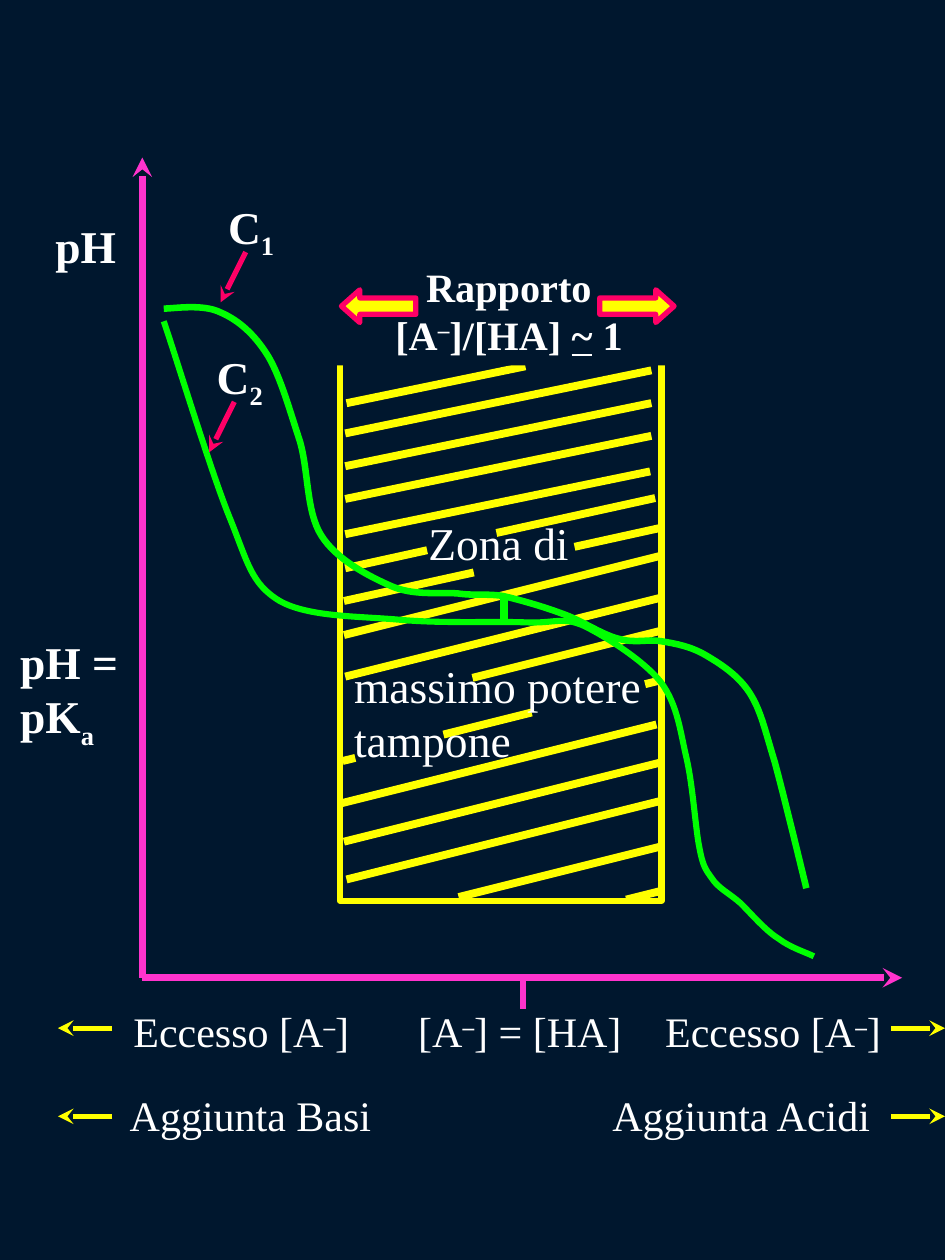
from lxml import etree
from pptx import Presentation
from pptx.dml.color import RGBColor
from pptx.enum.shapes import MSO_CONNECTOR, MSO_SHAPE
from pptx.enum.text import MSO_AUTO_SIZE, PP_ALIGN
from pptx.oxml.ns import qn
from pptx.util import Inches, Pt

STRAIGHT = MSO_CONNECTOR.STRAIGHT
RECTANGLE, RIGHT_ARROW = MSO_SHAPE.RECTANGLE, MSO_SHAPE.RIGHT_ARROW
LEFT, CENTER = PP_ALIGN.LEFT, PP_ALIGN.CENTER

NAVY = RGBColor(0x00, 0x17, 0x2E)
WHITE = RGBColor(0xFF, 0xFF, 0xFF)
YELLOW = RGBColor(0xFF, 0xFF, 0x00)
GREEN = RGBColor(0x00, 0xFF, 0x00)
MAGENTA = RGBColor(0xFF, 0x33, 0xCC)
CRIMSON = RGBColor(0xFF, 0x00, 0x66)
FONT = "Times New Roman"

SUPERSCRIPT = {"baseline": 30}
SUBSCRIPT = {"baseline": -25}
MINUS = ("–", {"baseline": 30, "size": 23, "bold": True})

# Stripes by slope: start x, start y, end x, from the corner of the buffer zone
STRIPES = {
    0.206: [(0.05, 0.35, 1.47), (0.04, 0.59, 2.47), (0.04, 0.85, 2.47),
            (0.04, 1.11, 2.47), (0.04, 1.39, 2.46)],
    0.22: [(0.04, 1.66, 0.69), (1.24, 1.38, 2.5), (1.86, 1.49, 2.54),
           (0.03, 1.92, 1.06)],
    0.25: [(0.03, 2.19, 2.54), (0.04, 2.52, 2.56), (1.05, 2.53, 2.57),
           (2.42, 2.58, 2.53), (0.82, 2.98, 1.52), (0.02, 3.19, 0.12),
           (-0.01, 3.53, 2.51), (0.03, 3.83, 2.55), (0.05, 4.13, 2.57),
           (0.94, 4.27, 2.54), (2.27, 4.29, 2.53)],
}

# Start point, then two control points and an end point for each segment
C1_CURVE = [
    (0, 0.04),
    (0.08, 0.04), (0.31, 0), (0.45, 0.07), (0.59, 0.13), (0.72, 0.24), (0.83, 0.42),
    (0.93, 0.59), (1, 0.85), (1.08, 1.09), (1.15, 1.33), (1.13, 1.65), (1.25, 1.84),
    (1.37, 2.03), (1.62, 2.16), (1.8, 2.24), (1.98, 2.32), (2.18, 2.29), (2.33, 2.3),
    (2.47, 2.32), (2.55, 2.3), (2.69, 2.32), (2.82, 2.35), (3, 2.4), (3.16, 2.46),
    (3.31, 2.51), (3.48, 2.63), (3.61, 2.66), (3.75, 2.7), (3.84, 2.66), (3.95, 2.68),
    (4.07, 2.7), (4.18, 2.72), (4.3, 2.79), (4.42, 2.86), (4.56, 2.95), (4.65, 3.09),
    (4.74, 3.23), (4.77, 3.38), (4.85, 3.64), (4.92, 3.9), (5.01, 4.27), (5.1, 4.64),
]
C2_CURVE = [
    (0, 0),
    (0.09, 0.26), (0.37, 1.18), (0.52, 1.55), (0.67, 1.92), (0.69, 2.08), (0.92, 2.22),
    (1.15, 2.35), (1.56, 2.34), (1.88, 2.37), (2.21, 2.4), (2.63, 2.38), (2.87, 2.39),
    (3.11, 2.4), (3.16, 2.34), (3.34, 2.42), (3.52, 2.51), (3.82, 2.7), (3.95, 2.87),
    (4.08, 3.05), (4.1, 3.26), (4.15, 3.47), (4.2, 3.69), (4.22, 4.02), (4.25, 4.17),
    (4.28, 4.33), (4.3, 4.35), (4.35, 4.42), (4.4, 4.5), (4.49, 4.54), (4.58, 4.62),
    (4.66, 4.7), (4.78, 4.84), (4.88, 4.9), (4.97, 4.97), (5.1, 5.01), (5.16, 5.04),
]


def add_line(slide, x1, y1, x2, y2, color, width, arrow=False):
    line = slide.shapes.add_connector(
        STRAIGHT, Inches(x1), Inches(y1), Inches(x2), Inches(y2))
    line.line.color.rgb = color
    line.line.width = Pt(width)
    if arrow:
        etree.SubElement(line.line._get_or_add_ln(), qn("a:tailEnd"), type="stealth")
    etree.SubElement(line._element.spPr, qn("a:effectLst"))


def add_text(slide, left, top, width, height, lines, size, bold=False, align=LEFT):
    """Each line is a list of runs; a run is a string or (string, format)."""
    frame = slide.shapes.add_textbox(
        Inches(left), Inches(top), Inches(width), Inches(height)).text_frame
    frame.margin_left = frame.margin_right = Inches(0.06)
    frame.margin_top = frame.margin_bottom = Inches(0.03)
    frame.word_wrap = False
    frame.auto_size = MSO_AUTO_SIZE.SHAPE_TO_FIT_TEXT
    for number, runs in enumerate(lines):
        paragraph = frame.add_paragraph() if number else frame.paragraphs[0]
        paragraph.alignment = align
        for item in runs:
            text, style = (item, {}) if isinstance(item, str) else item
            run = paragraph.add_run()
            run.text = text
            run.font.name = FONT
            run.font.size = Pt(style.get("size", size))
            run.font.bold = style.get("bold", bold)
            run.font.underline = style.get("underline", False)
            run.font.color.rgb = WHITE
            if "baseline" in style:
                run.font._element.set("baseline", str(style["baseline"] * 1000))


def add_curve(slide, left, top, points, width):
    """Build the outline from straight pieces, then join each three into a Bézier."""
    start, *rest = [(Inches(left + x), Inches(top + y)) for x, y in points]
    builder = slide.shapes.build_freeform(*start)
    builder.add_line_segments(rest, close=False)
    curve = builder.convert_to_shape()
    pieces = list(curve._element.iter(qn("a:lnTo")))
    for first in range(0, len(pieces), 3):
        segment = etree.Element(qn("a:cubicBezTo"))
        pieces[first].addprevious(segment)
        for piece in pieces[first:first + 3]:
            segment.append(piece[0])
            piece.getparent().remove(piece)
    curve.shadow.inherit = False
    curve.fill.background()
    curve.line.color.rgb = GREEN
    curve.line.width = Pt(width)


def add_buffer_zone(slide, left, top, width, height):
    for slope, stripes in STRIPES.items():
        for x1, y1, x2 in stripes:
            add_line(slide, left + x1, top + y1,
                     left + x2, top + y1 - slope * (x2 - x1), YELLOW, 4.5)
    group = slide.shapes.add_group_shape()
    frame = group.shapes.add_shape(
        RECTANGLE, Inches(left), Inches(top), Inches(width), Inches(height))
    frame.shadow.inherit = False
    frame.fill.background()
    frame.line.color.rgb = YELLOW
    frame.line.width = Pt(3.75)
    open_top = group.shapes.add_shape(
        RECTANGLE, Inches(left - 0.05), Inches(top - 0.05),
        Inches(width + 0.1), Inches(0.1))
    open_top.shadow.inherit = False
    open_top.fill.solid()
    open_top.fill.fore_color.rgb = NAVY
    open_top.line.fill.background()
    add_text(slide, left + 0.64, top + 1.21, 1.25, 0.5, [["Zona di"]], 26)
    add_text(slide, left + 0.05, top + 2.34, 2.42, 0.94,
             [["massimo potere"], ["tampone"]], 26)


def add_ratio_heading(slide, left, top, width):
    add_text(slide, left + 0.31, top, 2.04, 0.83,
             [["Rapporto"],
              ["[A", ("–", SUPERSCRIPT), "]/[HA] ", ("~", {"underline": True}), " 1"]],
             23, bold=True, align=CENTER)
    for arrow_left, rotation in ((left, 180), (left + width - 0.59, 0)):
        arrow = slide.shapes.add_shape(
            RIGHT_ARROW, Inches(arrow_left), Inches(top + 0.25), Inches(0.59), Inches(0.26))
        arrow.adjustments[1] = 0.56
        arrow.rotation = rotation
        arrow.shadow.inherit = False
        arrow.fill.solid()
        arrow.fill.fore_color.rgb = YELLOW
        arrow.line.color.rgb = CRIMSON
        arrow.line.width = Pt(3)


def add_axes(slide, left, top, width, height):
    bottom = top + height
    add_line(slide, left, bottom, left, top, MAGENTA, 3.75, arrow=True)
    add_line(slide, left, bottom, left + width, bottom, MAGENTA, 3.75, arrow=True)
    add_line(slide, left + 3.02, bottom, left + 3.02, bottom + 0.25, MAGENTA, 3)
    add_text(slide, left - 0.75, top + 0.45, 0.61, 0.5, [["pH"]], 26, bold=True)
    add_text(slide, left - 1.03, top + 3.75, 0.91, 0.94,
             [["pH ="], ["pK", ("a", SUBSCRIPT)]], 26, bold=True)


def add_curve_label(slide, left, top, number):
    add_line(slide, left + 0.2, top + 0.45, left, top + 0.85, CRIMSON, 3, arrow=True)
    add_text(slide, left, top, 0.51, 0.5, [["C", (number, SUBSCRIPT)]], 26, bold=True)


def add_axis_captions(slide, left, top, width):
    right = left + width
    excess = ["Eccesso [A", MINUS, "]"]
    for x, y, box_width, runs in (
            (left + 0.54, top, 1.86, excess),
            (left + 2.8, top, 1.76, ["[A", MINUS, "] = [HA]"]),
            (right - 2.28, top, 1.86, excess),
            (left + 0.51, top + 0.67, 2.07, ["Aggiunta Basi"]),
            (right - 2.7, top + 0.67, 2.2, ["Aggiunta Acidi"])):
        add_text(slide, x, y, box_width, 0.46, [runs], 24)
    for y in (top + 0.21, top + 0.91):
        add_line(slide, left + 0.43, y, left, y, YELLOW, 3, arrow=True)
        add_line(slide, right - 0.43, y, right, y, YELLOW, 3, arrow=True)


def main():
    deck = Presentation()
    deck.slide_width, deck.slide_height = Inches(7.5), Inches(10)
    slide = deck.slides.add_slide(deck.slide_layouts[6])
    slide.background.fill.solid()
    slide.background.fill.fore_color.rgb = NAVY

    add_axes(slide, 1.13, 1.25, 6.03, 6.51)
    add_buffer_zone(slide, 2.7, 2.85, 2.55, 4.3)
    add_line(slide, 4, 4.75, 4, 4.93, GREEN, 4.5)
    add_curve(slide, 1.3, 2.55, C2_CURVE, 3.5)
    add_curve(slide, 1.3, 2.41, C1_CURVE, 3.75)
    add_ratio_heading(slide, 2.71, 2.05, 2.64)
    add_curve_label(slide, 1.75, 1.55, "1")
    add_curve_label(slide, 1.66, 2.74, "2")
    add_axis_captions(slide, 0.46, 7.95, 7.04)
    deck.save("out.pptx")


if __name__ == "__main__":
    main()
